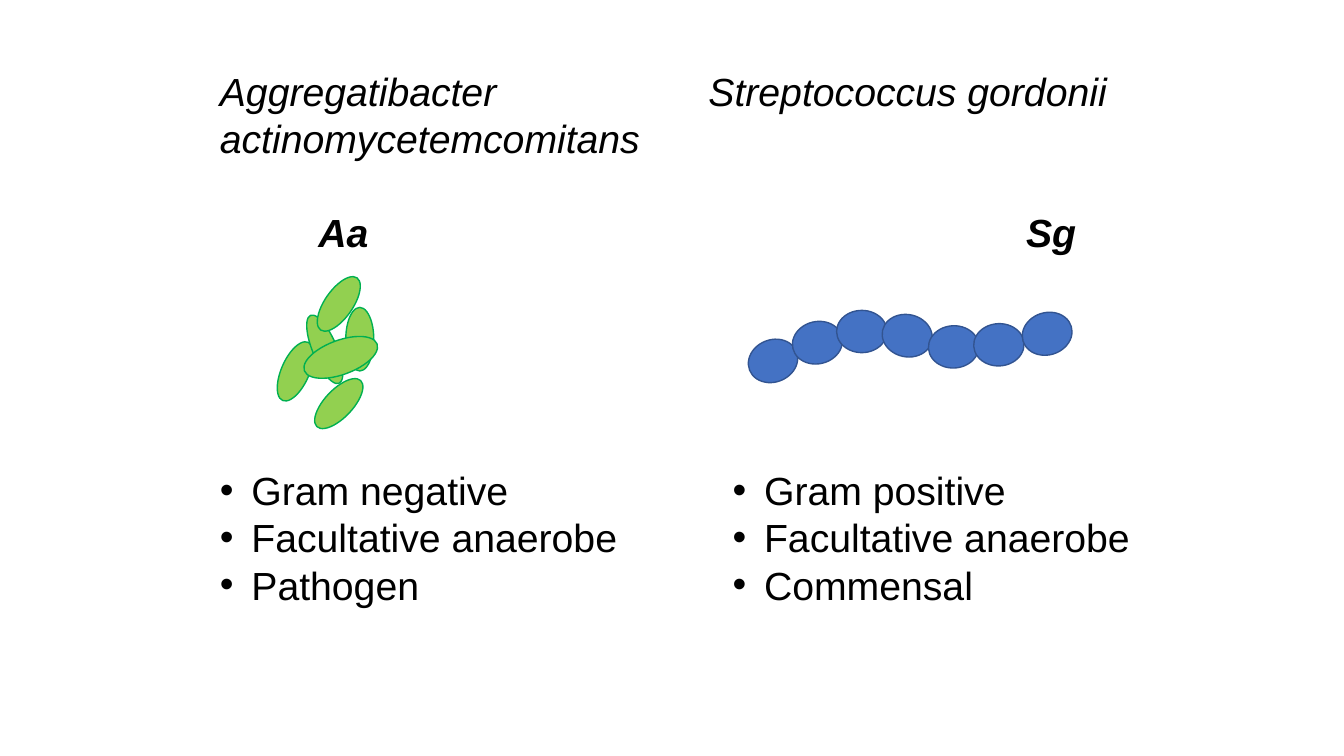
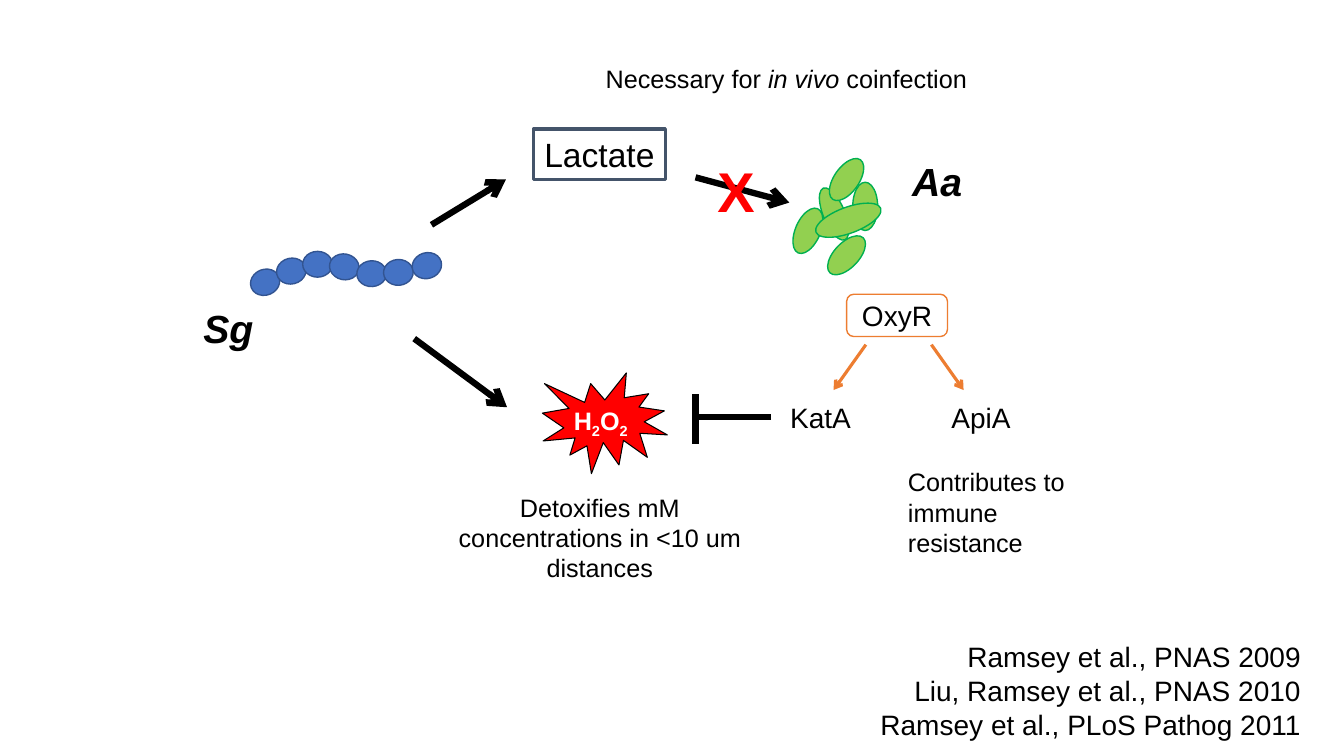
from dataclasses import dataclass

from lxml import etree
from pptx import Presentation
from pptx import util as u
from pptx.dml.color import RGBColor
from pptx.enum import shapes, text
from pptx.oxml import ns

Pt = u.Pt
SHAPE = shapes.MSO_SHAPE
ALIGN = text.PP_ALIGN


@dataclass(frozen=True)
class Theme:
    font: str = "Arial"
    ink: str = "000000"
    paper: str = "FFFFFF"
    rod: str = "92D050"
    rod_edge: str = "00B050"
    coccus: str = "4472C4"
    coccus_edge: str = "325491"
    alert: str = "FF0000"
    frame: str = "44546A"
    gene: str = "ED7D31"
    cross: int = 40
    head: int = 28
    metabolite: int = 24
    label: int = 20
    note: int = 18


THEME = Theme()

# Cells: centre offset from the first cell, width, height, rotation
RODS = [
    (0, 0, 20, 45.4, 23.7),
    (21, -15.8, 17.3, 52.6, 337.3),
    (46, -23, 20, 45.4, 0),
    (32.4, -10, 24.5, 55.4, 69.8),
    (31, 23, 20, 45.4, 43.5),
    (31, -48.2, 20, 45.4, 34.9),
]
COCCI = [
    (dx, dy, 36, 30.2, turn)
    for dx, dy, turn in [
        (0, 0, 338.3), (31.7, -13, 346.8), (63.4, -21, 0), (95.8, -18, 12),
        (129, -10, 357), (161.3, -11.5, 357), (195.8, -19.4, 342.9),
    ]
]


class Deck:
    def __init__(self, theme):
        self.theme = theme
        self.prs = Presentation()
        self.prs.slide_width, self.prs.slide_height = Pt(960), Pt(540)
        self.slide = None

    def new_slide(self):
        self.slide = self.prs.slides.add_slide(self.prs.slide_layouts[6])

    def fill_text(self, frame, paragraphs, size, color=None, align=ALIGN.LEFT,
                  bullets=False, **base):
        """Each paragraph is a string or a list of (words, style) runs."""
        for i, runs in enumerate(paragraphs):
            para = frame.paragraphs[0] if i == 0 else frame.add_paragraph()
            para.alignment = align
            if bullets:
                self.bullet(para)
            for words, style in [(runs, {})] if isinstance(runs, str) else runs:
                look = {**base, **style}
                run = para.add_run()
                run.text = words
                run.font.name, run.font.size = self.theme.font, Pt(size)
                run.font.bold = look.get("bold", False)
                run.font.italic = look.get("italic", False)
                run.font.color.rgb = RGBColor.from_string(color or self.theme.ink)
                if look.get("sub"):
                    run.font._element.set("baseline", "-25000")

    def bullet(self, para):
        props = para._p.get_or_add_pPr()
        props.set("marL", str(Pt(22.5)))
        props.set("indent", str(-Pt(22.5)))
        etree.SubElement(props, ns.qn("a:buFont"), typeface=self.theme.font)
        etree.SubElement(props, ns.qn("a:buChar"), char="•")

    def text(self, x, y, w, h, paragraphs, size, wrap=False, **style):
        box = self.slide.shapes.add_textbox(Pt(x), Pt(y), Pt(w), Pt(h))
        box.text_frame.word_wrap = wrap
        box.text_frame.auto_size = text.MSO_AUTO_SIZE.SHAPE_TO_FIT_TEXT
        self.fill_text(box.text_frame, paragraphs, size, **style)

    def shape(self, kind, x, y, w, h, fill, edge, weight=1, parent=None):
        item = (parent or self.slide).shapes.add_shape(
            kind, Pt(x), Pt(y), Pt(w), Pt(h))
        item.shadow.inherit = False
        if fill:
            item.fill.solid()
            item.fill.fore_color.rgb = RGBColor.from_string(fill)
        else:
            item.fill.background()
        item.line.color.rgb = RGBColor.from_string(edge)
        item.line.width = Pt(weight)
        return item

    def framed(self, kind, x, y, w, h, words, size, **look):
        box = self.shape(kind, x, y, w, h, **look)
        box.text_frame.word_wrap = False
        box.text_frame.vertical_anchor = text.MSO_ANCHOR.MIDDLE
        self.fill_text(box.text_frame, [words], size, align=ALIGN.CENTER)

    def cells(self, pattern, x, y, fill, edge, sx=1, sy=1):
        """Draw a group of cells whose first centre is at x, y."""
        colony = self.slide.shapes.add_group_shape()
        for dx, dy, w, h, turn in pattern:
            # A cell lying on its side stretches along the other axis
            kw, kh = (sy, sx) if 45 <= turn % 180 < 135 else (sx, sy)
            w, h = w * kw, h * kh
            cell = self.shape(SHAPE.OVAL, x + dx * sx - w / 2, y + dy * sy - h / 2,
                              w, h, fill, edge, parent=colony)
            cell.rotation = turn

    def rods(self, x, y, **scale):
        self.cells(RODS, x, y, self.theme.rod, self.theme.rod_edge, **scale)

    def cocci(self, x, y, **scale):
        self.cells(COCCI, x, y, self.theme.coccus, self.theme.coccus_edge, **scale)

    def species(self, x, y, short):
        self.text(x, y, 51, 41, [short], self.theme.head, bold=True, italic=True)

    def line(self, x1, y1, x2, y2, color=None, weight=4.5, arrow=True):
        link = self.slide.shapes.add_connector(
            shapes.MSO_CONNECTOR.STRAIGHT, Pt(x1), Pt(y1), Pt(x2), Pt(y2))
        link.line.color.rgb = RGBColor.from_string(color or self.theme.ink)
        link.line.width = Pt(weight)
        props = link._element.spPr
        if arrow:
            etree.SubElement(props.get_or_add_ln(), ns.qn("a:tailEnd"), type="arrow")
        etree.SubElement(props, ns.qn("a:effectLst"))


def compare_species(deck):
    deck.new_slide()
    size = deck.theme.head

    # Names
    deck.text(150, 44.6, 318, 75, ["Aggregatibacter", "actinomycetemcomitans"],
              size, italic=True)
    deck.text(499, 44.6, 302, 41, ["Streptococcus gordonii"], size, italic=True)
    deck.species(220.3, 145.4, "Aa")
    deck.species(725.8, 145.4, "Sg")

    # Cells
    deck.rods(211, 265.3)
    deck.cocci(552.2, 257.8)

    # Traits
    for left, gram, role in [(150, "negative", "Pathogen"),
                             (516.2, "positive", "Commensal")]:
        deck.text(left, 329.8, 301.7, 108.7,
                  [f"Gram {gram}", "Facultative anaerobe", role], size, bullets=True)


def show_interaction(deck):
    deck.new_slide()
    t = deck.theme

    # Partners
    deck.rods(577.1, 164.9, sx=0.89, sy=0.76)
    deck.cocci(189.4, 201.6, sx=0.59, sy=0.61)
    deck.species(138.2, 213.8, "Sg")
    deck.species(644.4, 108.7, "Aa")

    # Lactate route
    deck.framed(SHAPE.RECTANGLE, 381, 92.2, 94.3, 36, "Lactate", t.metabolite,
                fill=None, edge=t.frame, weight=2.25)
    deck.line(308.2, 160.6, 361.4, 128.2)
    deck.line(496.8, 126.7, 563.8, 144.7)
    deck.text(505.4, 108, 41.8, 55.4, ["X"], t.cross, color=t.alert, bold=True)
    deck.text(425.5, 41.8, 275, 28.8,
              [[("Necessary for ", {}), ("in vivo", {"italic": True}),
                (" coinfection", {})]], t.note)

    # Peroxide route
    deck.line(295.9, 241.9, 362.2, 290.9)
    deck.shape(SHAPE.EXPLOSION1, 387.4, 266.4, 89.3, 72, t.alert, t.ink, 0.75)
    deck.text(401.8, 285.8, 54.7, 28.8,
              [[("H", {}), ("2", {"sub": True}), ("O", {}), ("2", {"sub": True})]],
              t.note, color=t.paper, align=ALIGN.CENTER, bold=True)
    deck.text(310.3, 347.8, 236.2, 72.7,
              ["Detoxifies mM concentrations in <10 um distances"],
              t.note, wrap=True, align=ALIGN.CENTER)

    # Inhibition bar
    deck.line(550.8, 298, 496.8, 298, arrow=False)
    deck.line(496.8, 281.5, 496.8, 317.5, arrow=False)

    # Regulator and its genes
    deck.framed(SHAPE.ROUNDED_RECTANGLE, 604.8, 210.2, 72, 30.2, "OxyR", t.label,
                fill=t.paper, edge=t.gene)
    for start, end, left, gene in [(618.5, 595.4, 557.3, "KatA"),
                                   (665.3, 688.3, 672.5, "ApiA")]:
        deck.line(start, 246.2, end, 278.6, t.gene, 2.25)
        deck.text(left, 282.2, 58, 31.7, [gene], t.label)
    deck.text(641.5, 329.8, 155.5, 72.7, ["Contributes to immune resistance"],
              t.note, wrap=True)

    # References
    sources = ["Ramsey et al., PNAS 2009", "Liu, Ramsey et al., PNAS 2010",
               "Ramsey et al., PLoS Pathog 2011"]
    for row, source in enumerate(sources):
        deck.text(606.4, 453 + 24.5 * row, 330, 31.7, [source], t.label,
                  wrap=True, align=ALIGN.RIGHT)


def main():
    deck = Deck(THEME)
    compare_species(deck)
    show_interaction(deck)
    deck.prs.save("out.pptx")


if __name__ == "__main__":
    main()
